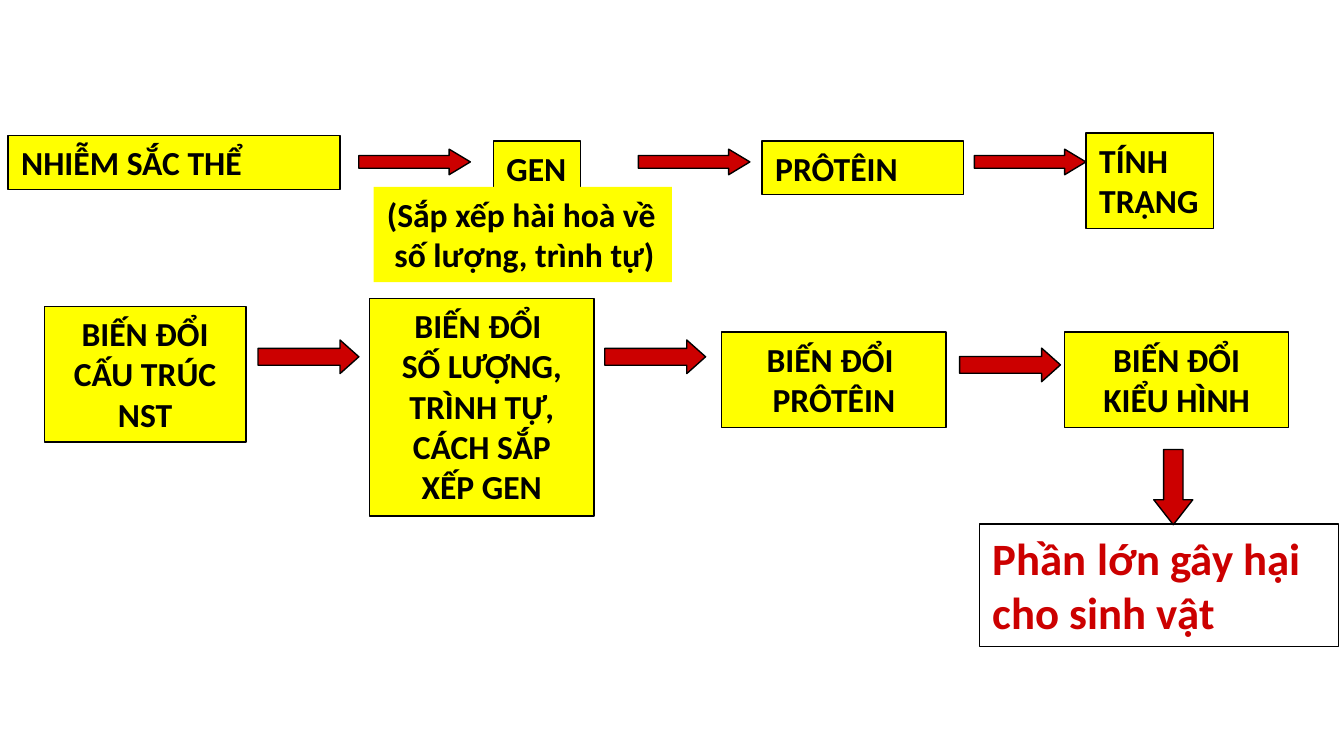
from dataclasses import dataclass

from pptx import Presentation
from pptx.dml.color import RGBColor
from pptx.enum.shapes import MSO_SHAPE
from pptx.enum.text import MSO_ANCHOR, MSO_AUTO_SIZE, PP_ALIGN
from pptx.util import Inches, Pt


@dataclass(frozen=True)
class Theme:
    font: str = "Calibri"
    body_size: int = 18
    result_size: int = 24
    line_width: float = 0.75
    ink: RGBColor = RGBColor(0x00, 0x00, 0x00)
    box: RGBColor = RGBColor(0xFF, 0xFF, 0x00)
    accent: RGBColor = RGBColor(0xCC, 0x00, 0x00)


class DiagramSlide:
    def __init__(self, slide, theme):
        self.slide = slide
        self.theme = theme

    def outline(self, shape):
        shape.line.color.rgb = self.theme.ink
        shape.line.width = Pt(self.theme.line_width)

    def box(self, position, lines, align=PP_ALIGN.LEFT, wrap=True,
            outlined=True, result=False):
        theme = self.theme
        shape = self.slide.shapes.add_textbox(*map(Inches, position))
        if not result:
            shape.fill.solid()
            shape.fill.fore_color.rgb = theme.box
        if outlined:
            self.outline(shape)
        frame = shape.text_frame
        frame.word_wrap = wrap
        frame.auto_size = MSO_AUTO_SIZE.SHAPE_TO_FIT_TEXT
        frame.vertical_anchor = MSO_ANCHOR.TOP
        for index, line in enumerate(lines):
            paragraph = frame.add_paragraph() if index else frame.paragraphs[0]
            paragraph.alignment = align
            run = paragraph.add_run()
            run.text = line
            run.font.name = theme.font
            run.font.bold = True
            run.font.size = Pt(theme.result_size if result else theme.body_size)
            run.font.color.rgb = theme.accent if result else theme.ink

    def arrow(self, position, head, rotation=0):
        shape = self.slide.shapes.add_shape(
            MSO_SHAPE.RIGHT_ARROW, *map(Inches, position))
        shape.adjustments[0] = 0.5
        shape.adjustments[1] = head
        shape.rotation = rotation
        shape.shadow.inherit = False
        shape.fill.solid()
        shape.fill.fore_color.rgb = self.theme.accent
        self.outline(shape)


def main():
    presentation = Presentation()
    presentation.slide_width = Inches(10)
    presentation.slide_height = presentation.slide_width * 9 // 16
    slide = presentation.slides.add_slide(presentation.slide_layouts[6])
    diagram = DiagramSlide(slide, Theme())

    diagram.box((0.06, 1.01, 2.47, 0.4), ["NHIỄM SẮC THỂ"])
    diagram.box((3.67, 1.05, 0.65, 0.4), ["GEN"], wrap=False)
    diagram.box((8.08, 0.99, 0.95, 0.71), ["TÍNH", "TRẠNG"], wrap=False)

    changes = [
        ((0.33, 2.28, 1.5, 1.01), ["BIẾN ĐỔI CẤU TRÚC NST"]),
        ((2.75, 2.22, 1.67, 1.62),
         ["BIẾN ĐỔI ", "SỐ LƯỢNG, TRÌNH TỰ, CÁCH SẮP XẾP GEN"]),
        ((5.37, 2.47, 1.67, 0.71), ["BIẾN ĐỔI ", "PRÔTÊIN"]),
        ((7.92, 2.47, 1.67, 0.71), ["BIẾN ĐỔI KIỂU HÌNH"]),
    ]
    for position, lines in changes:
        diagram.box(position, lines, align=PP_ALIGN.CENTER)

    diagram.box((2.78, 1.39, 2.22, 0.71),
                ["(Sắp xếp hài hoà về", " số lượng, trình tự)"],
                wrap=False, outlined=False)
    diagram.box((5.67, 1.05, 1.5, 0.4), ["PRÔTÊIN"])

    for left in (2.67, 4.75, 7.25):
        diagram.arrow((left, 1.11, 0.83, 0.19), head=0.83)
    for left, top in ((1.92, 2.53), (4.5, 2.53), (7.14, 2.59)):
        diagram.arrow((left, top, 0.75, 0.25), head=0.56)
    diagram.arrow((8.45, 3.48, 0.56, 0.29), head=0.64, rotation=90)

    diagram.box((7.29, 3.9, 2.67, 0.91), ["Phần lớn gây hại cho sinh vật"],
                result=True)
    presentation.save("out.pptx")


if __name__ == "__main__":
    main()
